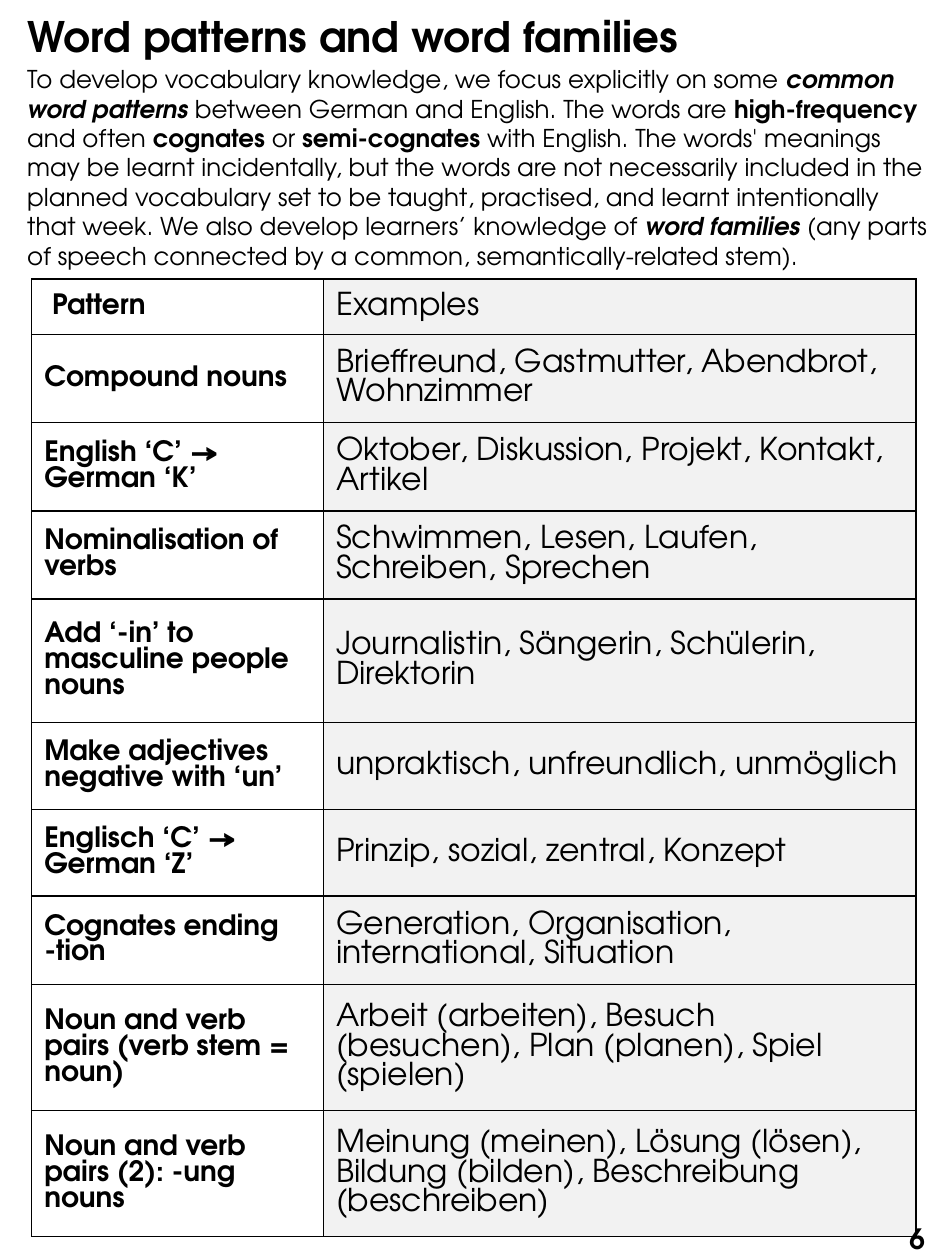
from lxml import etree
from pptx import Presentation
from pptx.dml.color import RGBColor
from pptx.enum.text import MSO_ANCHOR, MSO_AUTO_SIZE, PP_ALIGN
from pptx.oxml.ns import qn
from pptx.util import Cm, Pt

MIDDLE = MSO_ANCHOR.MIDDLE
TOP = MSO_ANCHOR.TOP
LEFT = PP_ALIGN.LEFT
RIGHT = PP_ALIGN.RIGHT
GROW = MSO_AUTO_SIZE.SHAPE_TO_FIT_TEXT
NO_FIT = MSO_AUTO_SIZE.NONE

FONT = "TeX Gyre Adventor"
BLACK, GREY = "000000", "F2F2F2"
TITLE_ONLY = 5

# Intro text, each piece with its emphasis
INTRO = [
    ("To develop vocabulary knowledge, we focus explicitly on some ", {}),
    ("common word patterns", {"bold": True, "italic": True}),
    (" between German and English. The words are ", {}),
    ("high-frequency ", {"bold": True}),
    ("and often ", {}),
    ("cognates", {"bold": True}),
    (" or ", {}),
    ("semi-cognates", {"bold": True}),
    (" with English. The words' meanings may be learnt incidentally, but the "
     "words are not necessarily included in the planned vocabulary set to be "
     "taught, practised, and learnt intentionally that week. We also develop "
     "learners’ knowledge of ", {}),
    ("word families ", {"bold": True, "italic": True}),
    ("(any parts of speech connected by a common, semantically-related stem).", {}),
]

# Row height in cm, pattern, examples
PATTERNS = [
    (1.12, "Pattern", "Examples"),
    (1.12, "Compound nouns", "Brieffreund, Gastmutter, Abendbrot, Wohnzimmer"),
    (1.75, "English ‘C’ → German ‘K’",
     "Oktober, Diskussion, Projekt, Kontakt, Artikel"),
    (1.75, "Nominalisation of verbs",
     "Schwimmen, Lesen, Laufen, Schreiben, Sprechen"),
    (2.49, "Add ‘-in’ to masculine people nouns",
     "Journalistin, Sängerin, Schülerin, Direktorin"),
    (1.75, "Make adjectives negative with ‘un’",
     "unpraktisch, unfreundlich, unmöglich"),
    (1.75, "Englisch ‘C’ → German ‘Z’", "Prinzip, sozial, zentral, Konzept"),
    (1.75, "Cognates ending -tion",
     "Generation, Organisation, international, Situation"),
    (2.49, "Noun and verb pairs (verb stem = noun)",
     "Arbeit (arbeiten), Besuch (besuchen), Plan (planen), Spiel (spielen)"),
    (2.49, "Noun and verb pairs (2): -ung nouns",
     "Meinung (meinen), Lösung (lösen), Bildung (bilden), "
     "Beschreibung (beschreiben)"),
]


def color(hex_string):
    return RGBColor.from_string(hex_string)


def apply_format(target, values):
    for name, value in values.items():
        setattr(target, name, value)


def write_runs(paragraph, pieces, size):
    for text, emphasis in pieces:
        run = paragraph.add_run()
        run.text = text
        base = {"name": FONT, "size": Pt(size), "bold": False, "italic": False}
        apply_format(run.font, base | emphasis)
        run.font.color.rgb = color(BLACK)


def add_title(slide, box, text):
    title = slide.shapes.title
    apply_format(title, dict(zip(("left", "top", "width", "height"), box)))
    apply_format(title.text_frame, {"vertical_anchor": MIDDLE, "word_wrap": True,
                                    "auto_size": NO_FIT})
    paragraph = title.text_frame.paragraphs[0]
    apply_format(paragraph, {"alignment": LEFT, "line_spacing": 0.9,
                             "space_before": Pt(0)})
    write_runs(paragraph, [(text, {"bold": True})], 24)


def add_text(slide, box, pieces, size, align, anchor, fit):
    frame = slide.shapes.add_textbox(*box).text_frame
    apply_format(frame, {"word_wrap": True, "vertical_anchor": anchor,
                         "auto_size": fit})
    frame.paragraphs[0].alignment = align
    write_runs(frame.paragraphs[0], pieces, size)


def add_borders(cell):
    properties = cell._tc.get_or_add_tcPr()
    for side in ("a:lnL", "a:lnR", "a:lnT", "a:lnB"):
        line = etree.SubElement(properties, qn(side), w=str(Pt(1)))
        fill = etree.SubElement(line, qn("a:solidFill"))
        etree.SubElement(fill, qn("a:srgbClr"), val=BLACK)


def add_pattern_table(slide, box, pattern_share):
    left, top, width, height = box
    table = slide.shapes.add_table(len(PATTERNS), 2, *box).table
    apply_format(table, {"first_row": False, "horz_banding": False})
    pattern_width = int(width * pattern_share)
    table.columns[0].width = pattern_width
    table.columns[1].width = width - pattern_width

    for row, (row_height, *texts) in enumerate(PATTERNS):
        table.rows[row].height = Cm(row_height)
        for column, text in enumerate(texts):
            cell = table.cell(row, column)
            cell.vertical_anchor = MIDDLE
            add_borders(cell)
            is_pattern = column == 0
            if is_pattern:
                cell.fill.background()
            else:
                cell.fill.solid()
                cell.fill.fore_color.rgb = color(GREY)
            write_runs(cell.text_frame.paragraphs[0],
                       [(text, {"bold": is_pattern})], 16 if is_pattern else 18)

    # The heading of the first column is slightly indented
    table.cell(0, 0).margin_left = Cm(0.41)


def main():
    deck = Presentation()
    deck.slide_width, deck.slide_height = Cm(19.05), Cm(25.4)
    slide = deck.slides.add_slide(deck.slide_layouts[TITLE_ONLY])

    # Heading and introduction
    add_title(slide, (Cm(0.3), Cm(0.4), Cm(14.15), Cm(0.77)),
              "Word patterns and word families")
    add_text(slide, (Cm(0.3), Cm(1.17), Cm(18.72), Cm(4.45)),
             INTRO, 14, LEFT, TOP, GROW)

    # Patterns with examples
    add_pattern_table(slide, (Cm(0.64), Cm(5.62), Cm(17.83), Cm(18.46)), 0.33)

    # Page number
    add_text(slide, (Cm(14.45), Cm(24.08), Cm(4.45), Cm(1.75)),
             [("6", {"bold": True})], 16, RIGHT, MIDDLE, NO_FIT)

    deck.save("out.pptx")


if __name__ == "__main__":
    main()
